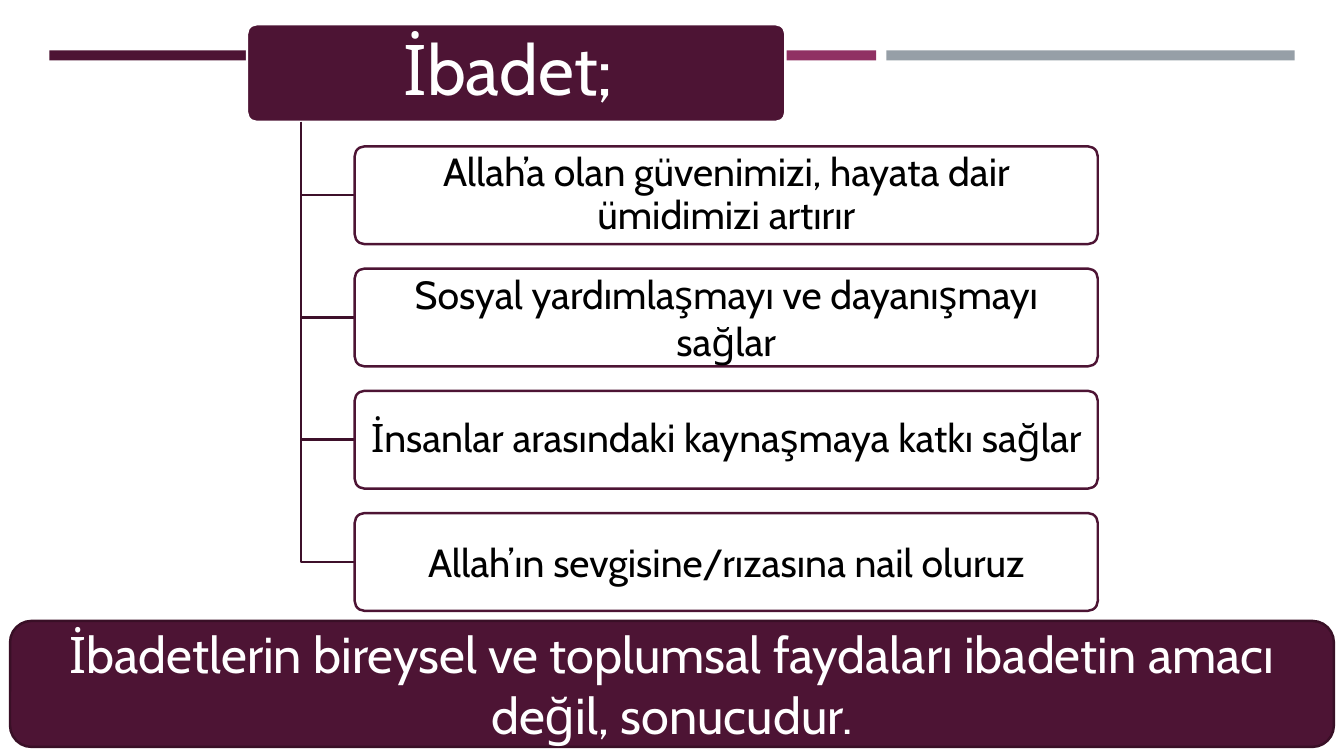
from lxml import etree
from pptx import Presentation
from pptx import util as u
from pptx.dml.color import RGBColor
from pptx.enum import shapes, text
from pptx.oxml.ns import qn

COLORS = {
    "plum": "4D1434", "berry": "903163", "gray": "969FA7",
    "branch": "3E102A", "banner_edge": "390F26",
    "white": "FFFFFF", "black": "000000",
}
FONT = "Cabin"
LINE_WIDTH = 1.75
BENEFITS = [
    ("Allah’a olan güvenimizi, hayata dair ümidimizi artırır", 0.9),
    ("Sosyal yardımlaşmayı ve dayanışmayı sağlar", 1.0),
    ("İnsanlar arasındaki kaynaşmaya katkı sağlar", 0.9),
    ("Allah’ın sevgisine/rızasına nail oluruz", 1.0),
]


def color(name):
    return RGBColor.from_string(COLORS[name])


def write(shape, words, size, ink, spacing=1.0, margins=(0.1, 0.05)):
    """Put one centred paragraph in a shape; margins are (side, top and bottom)."""
    frame = shape.text_frame
    frame.word_wrap = True
    frame.auto_size = text.MSO_AUTO_SIZE.NONE
    frame.vertical_anchor = text.MSO_ANCHOR.MIDDLE
    frame.margin_left = frame.margin_right = u.Inches(margins[0])
    frame.margin_top = frame.margin_bottom = u.Inches(margins[1])
    para = frame.paragraphs[0]
    para.alignment = text.PP_ALIGN.CENTER
    para.line_spacing = spacing
    span = para.add_run()
    span.text = words
    span.font.name = FONT
    span.font.size = u.Pt(size)
    span.font.color.rgb = color(ink)


def set_line(shape, name):
    shape.line.color.rgb = color(name)
    shape.line.width = u.Pt(LINE_WIDTH)


def add_box(page, box, fill, edge=None, corner=None):
    """Draw a rectangle, rounded when a corner ratio is given."""
    kinds = shapes.MSO_SHAPE
    kind = kinds.RECTANGLE if corner is None else kinds.ROUNDED_RECTANGLE
    shape = page.shapes.add_shape(kind, *map(u.Inches, box))
    shape.shadow.inherit = False
    shape.fill.solid()
    shape.fill.fore_color.rgb = color(fill)
    if corner is not None:
        shape.adjustments[0] = corner
    if edge:
        set_line(shape, edge)
    else:
        shape.line.fill.background()
    return shape


def add_top_bars(page, left, top, width, gap):
    for i, fill in enumerate(("plum", "berry", "gray")):
        add_box(page, (left + i * (width + gap), top, width, 0.1), fill)


def add_header(page, box):
    left, top, width, height = box
    add_box(page, box, "plum", "white", corner=0.1)
    title = page.shapes.title
    inset = 0.03
    title.left, title.top = u.Inches(left + inset), u.Inches(top + inset)
    title.width = u.Inches(width - 2 * inset)
    title.height = u.Inches(height - 2 * inset)
    write(title, "İbadet; ", 50, "white", spacing=0.9, margins=(0.1, 0.07))
    page.shapes._spTree.append(title.element)  # bring in front of its box


def add_branch(page, trunk, top, end, middle):
    """Draw the elbow from the header down the trunk and across to a card."""
    builder = page.shapes.build_freeform(u.Inches(trunk), u.Inches(top))
    corners = [(trunk, middle), (end, middle)]
    builder.add_line_segments(
        [(u.Inches(x), u.Inches(y)) for x, y in corners], close=False)
    branch = builder.convert_to_shape()
    branch.shadow.inherit = False
    branch.fill.background()
    set_line(branch, "branch")


def add_benefits(page, header):
    """Hang the benefit cards below the header box, one gap apart."""
    left, top, width, height = header
    bottom = top + height
    step = 1.25 * height
    trunk, card_left = left + 0.1 * width, left + 0.2 * width
    for i, (words, spacing) in enumerate(BENEFITS, 1):
        card_top = top + i * step
        add_branch(page, trunk, bottom, card_left, card_top + height / 2)
        card = add_box(page, (card_left, card_top, 7.37, height),
                       "white", "plum", corner=0.1)
        fill_color = card.element.spPr.find(qn("a:solidFill"))[0]
        etree.SubElement(fill_color, qn("a:alpha"), val="90000")
        write(card, words, 28, "black", spacing, margins=(0.06, 0.04))


def add_banner(page, box):
    banner = add_box(page, box, "plum", "banner_edge", corner=0.17)
    write(banner, "İbadetlerin bireysel ve toplumsal faydaları ibadetin "
          "amacı değil, sonucudur.", 36, "white")


def main():
    deck = Presentation()
    deck.slide_width, deck.slide_height = u.Inches(13.33), u.Inches(7.5)
    page = deck.slides.add_slide(deck.slide_layouts.get_by_name("Title Only"))
    header = (2.45, 0.24, 5.34, 0.97)
    add_top_bars(page, left=0.49, top=0.5, width=4.05, gap=0.1)
    add_header(page, header)
    add_benefits(page, header)
    add_banner(page, (0.1, 6.16, 13.13, 1.25))
    deck.save("out.pptx")


if __name__ == "__main__":
    main()
